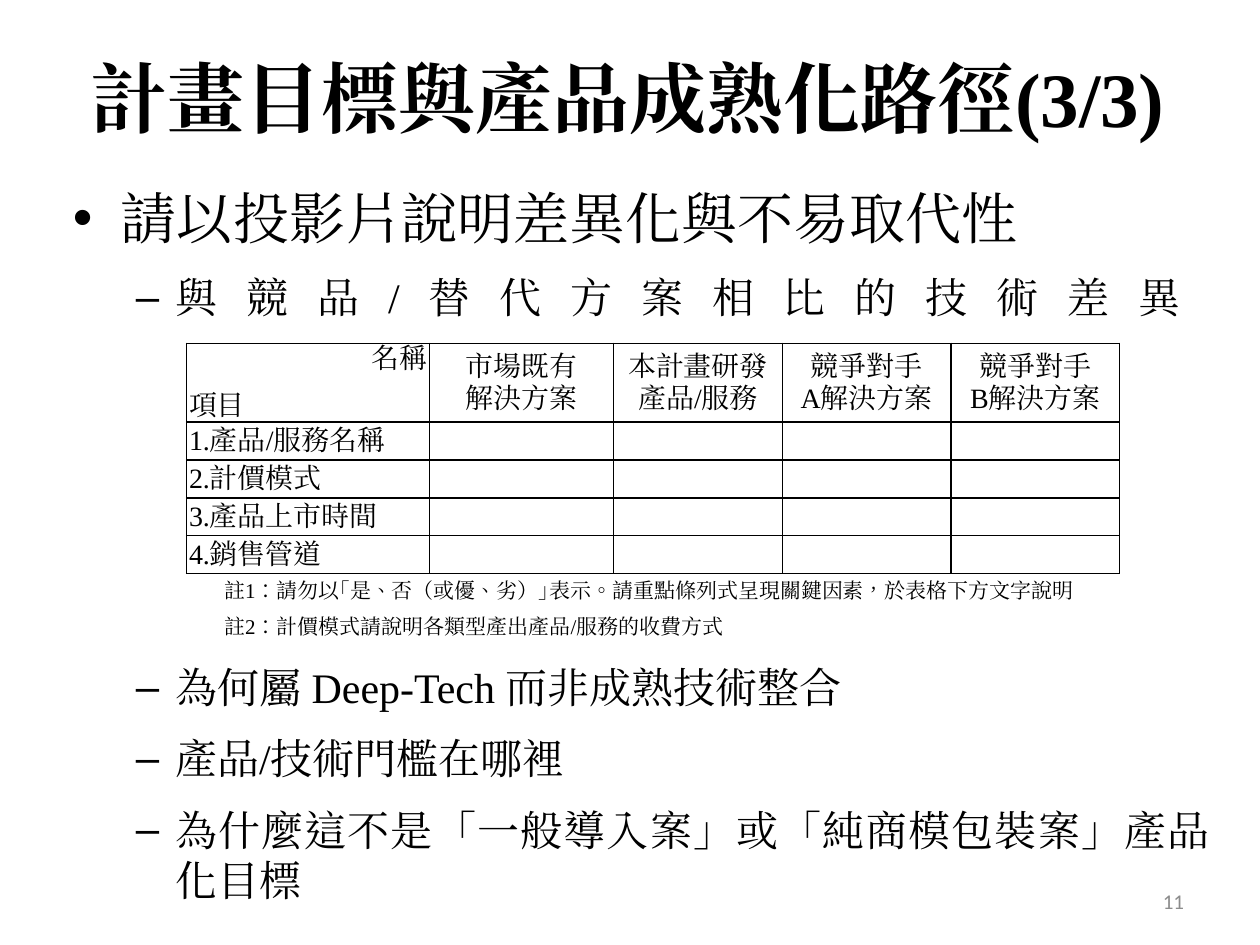
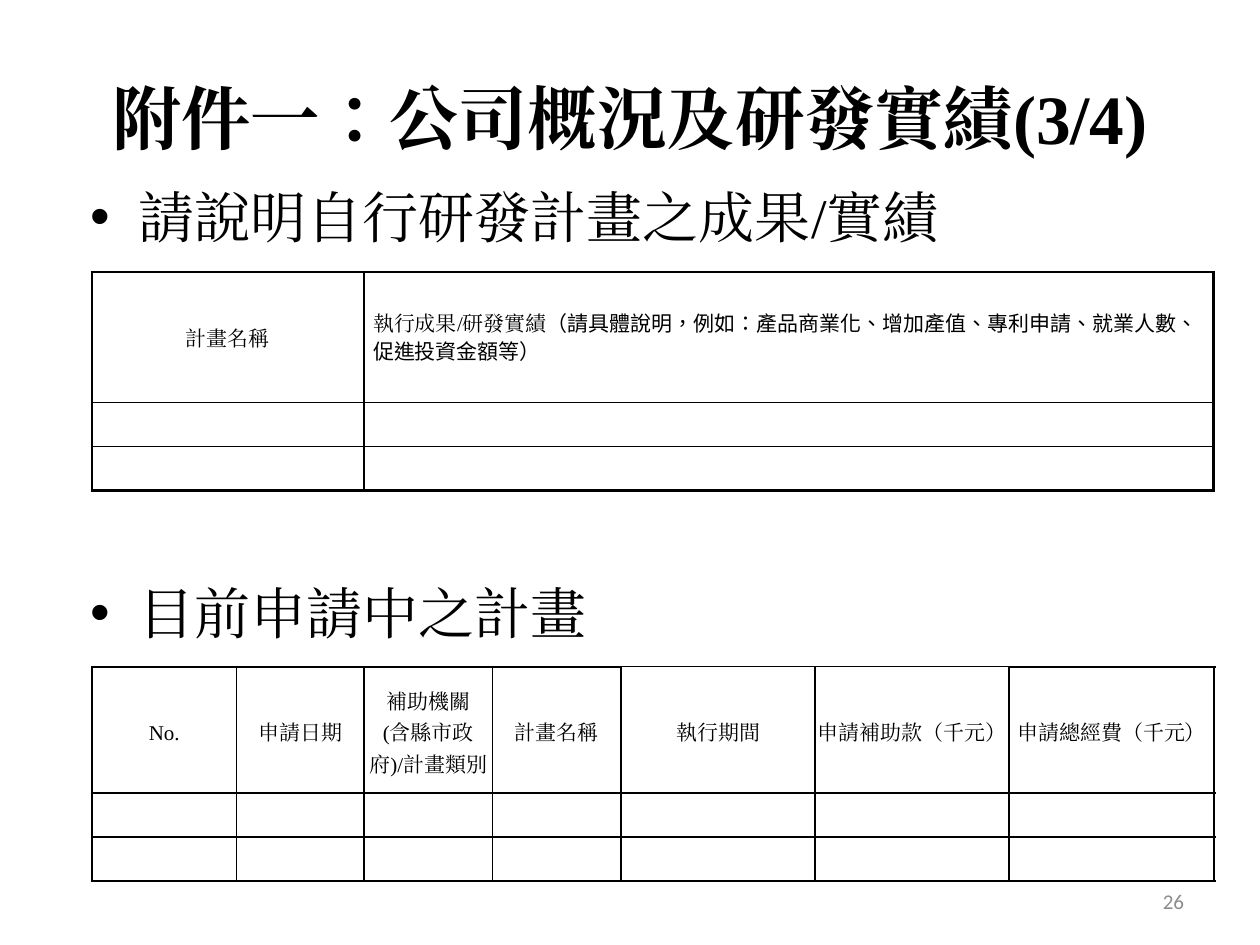
"""Builds two slides of a project proposal template: differentiation and R&D record."""
from lxml import etree
from pptx import Presentation
from pptx import util as u
from pptx.dml.color import RGBColor
from pptx.enum import text
from pptx.oxml.ns import qn

COLORS = {"ink": "000000", "number": "8C8C8C"}
SERIF, SANS, CJK = "Times New Roman", "Calibri", "Noto Sans CJK SC"
LEFT, CENTER, RIGHT, JUSTIFY = (
    text.PP_ALIGN.LEFT, text.PP_ALIGN.CENTER, text.PP_ALIGN.RIGHT, text.PP_ALIGN.JUSTIFY)
MIDDLE = text.MSO_ANCHOR.MIDDLE
THIN, THICK = 1, 1.5


def format_span(span, size, font=SERIF, color="ink", bold=False):
    """Set the font of one run for both Latin and Chinese letters."""
    span.font.size = u.Pt(size)
    span.font.bold = bold
    span.font.color.rgb = RGBColor.from_string(COLORS[color])
    span.font.name = font
    properties = span._r.get_or_add_rPr()
    properties.set("lang", "zh-TW")
    etree.SubElement(properties, qn("a:ea")).set("typeface", font)


def format_para(para, size, align=LEFT, line=None, before=0, **font):
    """Set spacing, alignment and run fonts of one paragraph."""
    para.alignment = align
    para.space_before = u.Pt(before)
    if line:
        para.line_spacing = u.Pt(line)
    for span in para.runs:
        format_span(span, size, **font)
    for line_break in para._p.findall(qn("a:br")):
        etree.SubElement(line_break, qn("a:rPr")).set("sz", str(size * 100))


def set_bullet(para, mark, margin, hanging):
    """Give a paragraph a bullet with a hanging indent."""
    properties = para._p.get_or_add_pPr()
    properties.set("marL", str(u.Cm(margin)))
    properties.set("indent", str(-u.Cm(hanging)))
    etree.SubElement(properties, qn("a:buFont")).set("typeface", "Arial")
    etree.SubElement(properties, qn("a:buChar")).set("char", mark)


def add_titled_page(deck, title, left, top, size, number):
    """Add a title-only page with its heading and page number."""
    page = deck.slides.add_slide(deck.slide_layouts[5])
    box = page.shapes.title
    box.left, box.top, box.width, box.height = map(u.Cm, (left, top, 22.86, 3.18))
    frame = box.text_frame
    frame.text = title
    frame.vertical_anchor = MIDDLE
    frame.auto_size = text.MSO_AUTO_SIZE.NONE
    format_para(frame.paragraphs[0], size, CENTER, bold=True)
    frame = add_box(page, [str(number)], 18.2, 17.65, 5.92, 1.02)
    frame.vertical_anchor = MIDDLE
    format_para(frame.paragraphs[0], 12, RIGHT, font=SANS, color="number")
    return page


def add_box(page, lines, left, top, width, height):
    """Add a wrapping text box with one paragraph per line."""
    frame = page.shapes.add_textbox(*map(u.Cm, (left, top, width, height))).text_frame
    frame.word_wrap = True
    for index, line in enumerate(lines):
        para = frame.add_paragraph() if index else frame.paragraphs[0]
        para.text = line
    return frame


def add_outline(page, heading, points, left, top, width, height, align=LEFT):
    """Add a bulleted heading with (text, space before) points below it."""
    lines = [heading] + [point for point, _ in points]
    first, *others = add_box(page, lines, left, top, width, height).paragraphs
    set_bullet(first, "•", 0.97, 0.97)
    format_para(first, 32, align)
    for para, (_, before) in zip(others, points):
        set_bullet(para, "–", 2.06, 0.79)
        format_para(para, 24, align, before=before)


def set_borders(cell, widths):
    """Draw the left, right, top and bottom lines of a cell."""
    properties = cell._tc.get_or_add_tcPr()
    for side, width in zip("LRTB", widths):
        line = etree.SubElement(properties, qn(f"a:ln{side}"), w=str(u.Pt(width)))
        fill = etree.SubElement(line, qn("a:solidFill"))
        etree.SubElement(fill, qn("a:srgbClr"), val=COLORS["ink"])


def add_grid(page, left, top, columns, rows, texts, size, line, inset,
             edge=THICK, thin_tops=()):
    """Add a plain ruled table; texts maps (row, column) to (text, alignment)."""
    table = page.shapes.add_table(len(rows), len(columns), u.Cm(left), u.Cm(top),
                                  u.Cm(sum(columns)), u.Cm(sum(rows))).table
    table.first_row = table.horz_banding = False
    for column, width in zip(table.columns, columns):
        column.width = u.Cm(width)
    for row, height in zip(table.rows, rows):
        row.height = u.Cm(height)
    last_row, last_column = len(rows) - 1, len(columns) - 1
    for r in range(len(rows)):
        for c in range(len(columns)):
            cell = table.cell(r, c)
            outer = (c == 0, c == last_column, r == 0 and c not in thin_tops, r == last_row)
            set_borders(cell, [edge if side else THIN for side in outer])
            cell.fill.background()
            cell.vertical_anchor = MIDDLE
            cell.margin_left = cell.margin_right = u.Cm(inset)
            cell.margin_top = cell.margin_bottom = 0
            content, align = texts.get((r, c), ("", LEFT))
            cell.text_frame.text = content
            for para in cell.text_frame.paragraphs:
                format_para(para, size, align, line)
    return table


def build_differentiation(deck):
    """Build the page comparing the product with rival solutions."""
    page = add_titled_page(deck, "計畫目標與產品成熟化路徑(3/3)", 1.22, 0.36, 44, 11)
    points = [("與競品/替代方案相比的技術差異\v", 12),
              ("為何屬 Deep-Tech 而非成熟技術整合", 165),
              ("產品/技術門檻在哪裡", 12),
              ("為什麼這不是「一般導入案」或「純商模包裝案」產品化目標", 12)]
    add_outline(page, "請以投影片說明差異化與不易取代性", points,
                1.22, 3.58, 23.42, 14.2, JUSTIFY)
    solutions = ["市場既有\v解決方案", "本計畫研發\v產品/服務",
                 "競爭對手\vA解決方案", "競爭對手\vB解決方案"]
    items = ["1.產品/服務名稱", "2.計價模式", "3.產品上市時間", "4.銷售管道"]
    texts = {(0, 0): ("名稱\n項目", LEFT)}
    texts.update({(0, c): (name, CENTER) for c, name in enumerate(solutions, 1)})
    texts.update({(r, 0): (name, LEFT) for r, name in enumerate(items, 1)})
    table = add_grid(page, 3.76, 6.92, [4.9, 3.71] + [3.4] * 3, [1.59] + [0.64] * 4,
                     texts, 16, 18, 0.05, edge=THIN)
    name, item = table.cell(0, 0).text_frame.paragraphs
    name.alignment = RIGHT
    item.space_before = u.Pt(9)
    notes = ["註1：請勿以｢是、否（或優、劣）｣表示。請重點條列式呈現關鍵因素，於表格下方文字說明",
             "註2：計價模式請說明各類型產出產品/服務的收費方式"]
    for para in add_box(page, notes, 4.27, 11.33, 20.42, 1.6).paragraphs:
        format_para(para, 12, line=20)


def build_record(deck):
    """Build the page with R&D results and pending applications."""
    page = add_titled_page(deck, "附件一：公司概況及研發實績(3/4)", 1.27, 0.76, 39.6, 26)
    add_outline(page, "請說明自行研發計畫之成果/實績", [], 1.57, 3.56, 22.86, 9.4)
    add_outline(page, "目前申請中之計畫", [], 1.57, 11.53, 22.86, 6.73)
    headings = ["No.", "申請日期", "補助機關\n(含縣市政府)/計畫類別", "計畫名稱",
                "執行期間", "申請補助款（千元）", "申請總經費（千元）"]
    add_grid(page, 1.85, 13.44, [2.92, 2.57, 2.59, 2.59, 3.91, 3.91, 4.14],
             [2.54, 0.89, 0.89],
             {(0, c): (name, CENTER) for c, name in enumerate(headings)},
             12, 18, 0.05, thin_tops=(4, 5))
    results = add_grid(page, 1.85, 5.49, [5.49, 17.12], [2.62, 0.89, 0.89],
                       {(0, 0): ("計畫名稱", CENTER), (0, 1): ("執行成果/研發實績", LEFT)},
                       12, 16, 0.18)
    hint = results.cell(0, 1).text_frame.paragraphs[0].add_run()
    hint.text = "（請具體說明，例如：產品商業化、增加產值、專利申請、就業人數、促進投資金額等）"
    format_span(hint, 12, CJK)


def main():
    """Build and save the deck."""
    deck = Presentation()
    deck.slide_width, deck.slide_height = u.Cm(25.4), u.Cm(19.05)
    build_differentiation(deck)
    build_record(deck)
    deck.save("out.pptx")


if __name__ == "__main__":
    main()
